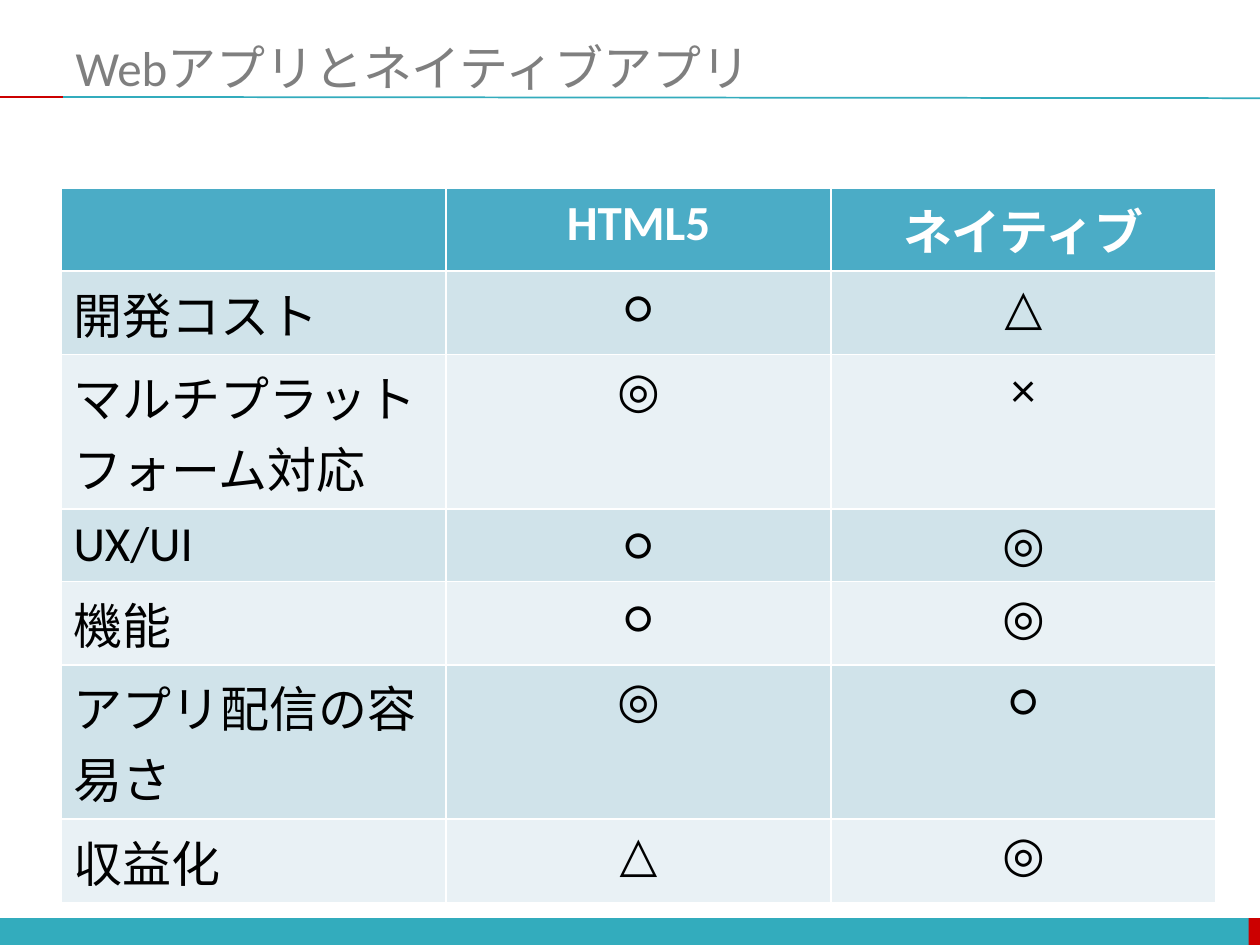
from dataclasses import dataclass

from pptx import Presentation
from pptx.dml.color import RGBColor as RGB
from pptx.enum.shapes import MSO_CONNECTOR as CONN, MSO_SHAPE as SHAPE
from pptx.enum.text import MSO_ANCHOR as ANCHOR, MSO_AUTO_SIZE as AUTO, PP_ALIGN as ALIGN
from pptx.oxml.ns import qn
from pptx.util import Pt


@dataclass(frozen=True)
class Theme:
    font: str = "Calibri"
    size: float = 28
    teal: str = "33ACBD"
    red: str = "CC0000"
    title: str = "7F7F7F"
    header: str = "4BACC6"
    bands: tuple = ("D0E3EA", "E9F1F5")
    white: str = "FFFFFF"
    black: str = "000000"


@dataclass(frozen=True)
class Bar:
    left: float
    width: float
    color: str


@dataclass(frozen=True)
class Rule:
    x1: float
    y1: float
    x2: float
    y2: float
    color: str


THEME = Theme()
BAR_TOP, BAR_HEIGHT = 524.7, 15.6
BARS = [Bar(0, 720, THEME.teal), Bar(713.6, 6.4, THEME.red)]
RULES = [
    Rule(36, 55.4, 720, 56.1, THEME.teal),
    Rule(0, 55.4, 36, 55.4, THEME.red),
]
ROWS = [
    ("", "HTML5", "ネイティブ"),
    ("開発コスト", "○", "△"),
    ("マルチプラットフォーム対応", "◎", "×"),
    ("UX/UI", "○", "◎"),
    ("機能", "○", "◎"),
    ("アプリ配信の容易さ", "◎", "○"),
    ("収益化", "△", "◎"),
]
ROW_HEIGHTS = [32.4, 32.4, 56.2, 32.4, 32.4, 32.4, 32.4]
COL_WIDTH = 220


def draw_bar(shapes, bar: Bar) -> None:
    sp = shapes.add_shape(SHAPE.RECTANGLE, Pt(bar.left), Pt(BAR_TOP),
                          Pt(bar.width), Pt(BAR_HEIGHT))
    sp.shadow.inherit = False
    sp.fill.solid()
    sp.fill.fore_color.rgb = RGB.from_string(bar.color)
    sp.line.fill.background()


def draw_rule(shapes, rule: Rule) -> None:
    line = shapes.add_connector(CONN.STRAIGHT, Pt(rule.x1), Pt(rule.y1),
                                Pt(rule.x2), Pt(rule.y2))
    line.line.color.rgb = RGB.from_string(rule.color)
    line.line.width = Pt(1)
    sp_pr = line._element.spPr
    sp_pr.append(sp_pr.makeelement(qn("a:effectLst"), {}))


def format_text(p, color: str, bold: bool, align) -> None:
    p.alignment = align
    p.font.size = Pt(THEME.size)
    for r in p.runs:
        r.font.name = THEME.font
        r.font.size = Pt(THEME.size)
        r.font.bold = bold
        r.font.color.rgb = RGB.from_string(color)


def draw_table(shapes) -> None:
    # The default table style supplies the white grid and heavy header rule
    cols = len(ROWS[0])
    table = shapes.add_table(len(ROWS), cols, Pt(34.8), Pt(107.3),
                             Pt(COL_WIDTH * cols), Pt(sum(ROW_HEIGHTS))).table
    for col in table.columns:
        col.width = Pt(COL_WIDTH)
    for i, (values, height) in enumerate(zip(ROWS, ROW_HEIGHTS)):
        table.rows[i].height = Pt(height)
        is_header = i == 0
        fill = THEME.header if is_header else THEME.bands[(i - 1) % 2]
        color = THEME.white if is_header else THEME.black
        for j, value in enumerate(values):
            cell = table.cell(i, j)
            cell.fill.solid()
            cell.fill.fore_color.rgb = RGB.from_string(fill)
            cell.text_frame.text = value
            format_text(cell.text_frame.paragraphs[0], color, is_header,
                        ALIGN.CENTER if j else ALIGN.LEFT)


def draw_title(title) -> None:
    title.left, title.top, title.width, title.height = Pt(36), Pt(21.6), Pt(684), Pt(33.1)
    tf = title.text_frame
    tf.text = "Webアプリとネイティブアプリ"
    tf.auto_size = AUTO.NONE
    tf.vertical_anchor = ANCHOR.MIDDLE
    format_text(tf.paragraphs[0], THEME.title, False, ALIGN.LEFT)


def main() -> None:
    prs = Presentation()
    prs.slide_width, prs.slide_height = Pt(720), Pt(540)
    slide = prs.slides.add_slide(prs.slide_layouts[5])

    # Footer bars and the rule under the title
    for bar in BARS:
        draw_bar(slide.shapes, bar)
    for rule in RULES:
        draw_rule(slide.shapes, rule)

    # Content
    draw_table(slide.shapes)
    draw_title(slide.shapes.title)
    prs.save("out.pptx")


if __name__ == "__main__":
    main()
